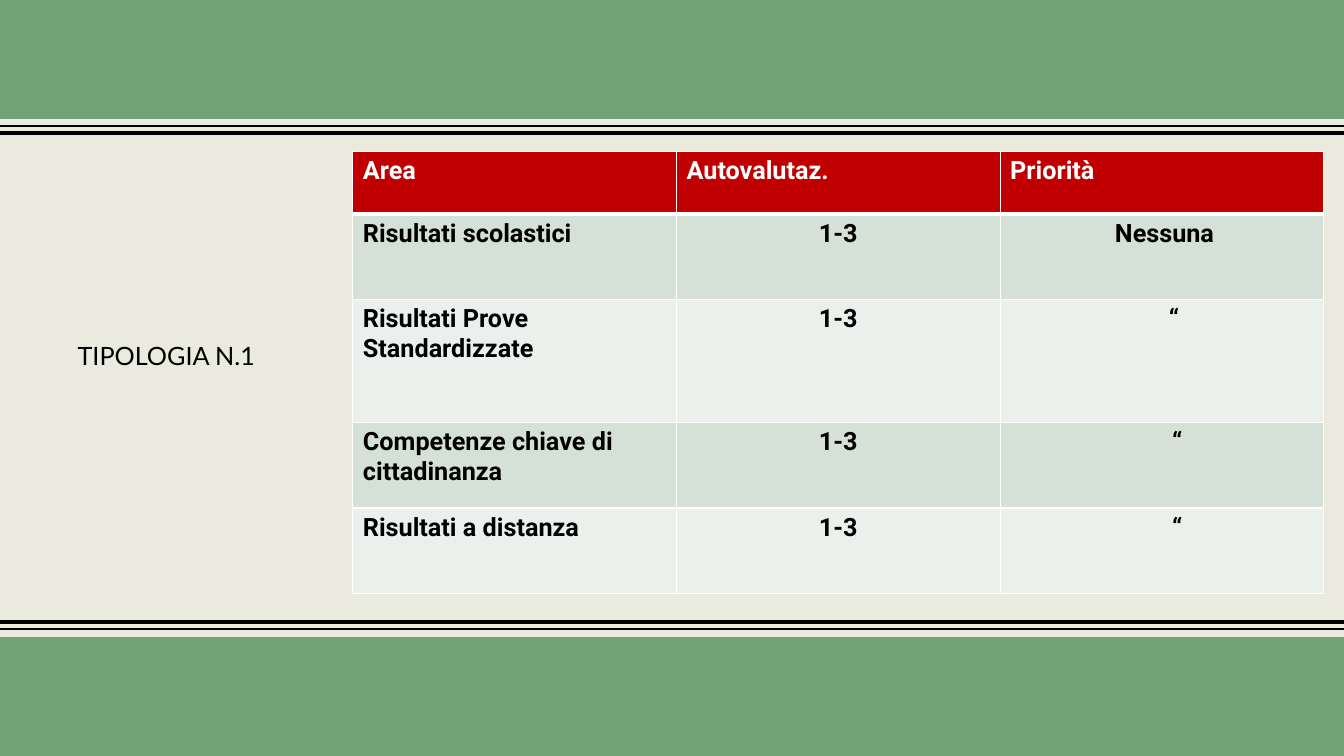
from lxml import etree
from pptx import Presentation
from pptx.dml.color import RGBColor
from pptx.enum.shapes import MSO_CONNECTOR, MSO_SHAPE
from pptx.enum.text import MSO_ANCHOR, PP_ALIGN
from pptx.oxml import parse_xml
from pptx.oxml.ns import nsdecls, qn
from pptx.util import Inches, Pt

STRAIGHT = MSO_CONNECTOR.STRAIGHT
RECTANGLE = MSO_SHAPE.RECTANGLE
LEFT, CENTER = PP_ALIGN.LEFT, PP_ALIGN.CENTER
BOTTOM = MSO_ANCHOR.BOTTOM
WIDTH, HEIGHT = 13.33, 7.5
BAND_HEIGHT = 1.18


def color(value):
    return RGBColor.from_string(value)


def write(para, text, font, ink, bold, align):
    para.alignment = align
    span = para.add_run()
    span.text = text
    span.font.name = font
    span.font.size = Pt(18)
    span.font.bold = bold
    span.font.color.rgb = color(ink)


deck = Presentation()
deck.slide_width, deck.slide_height = Inches(WIDTH), Inches(HEIGHT)
page = deck.slides.add_slide(deck.slide_layouts[5])
page.background.fill.solid()
page.background.fill.fore_color.rgb = color("EAEBDE")

# Green bands at the top and bottom
for top in (0, HEIGHT - BAND_HEIGHT):
    band = page.shapes.add_shape(
        RECTANGLE, 0, Inches(top), Inches(WIDTH), Inches(BAND_HEIGHT))
    band.shadow.inherit = False
    band.fill.solid()
    band.fill.fore_color.rgb = color("72A376")
    band.line.fill.background()

# Double rules beside the bands
for y, weight in ((1.25, 1), (1.32, 3), (6.17, 3), (6.24, 1)):
    rule = page.shapes.add_connector(
        STRAIGHT, 0, Inches(y), Inches(WIDTH), Inches(y))
    rule.line.color.rgb = color("000000")
    rule.line.width = Pt(weight)
    etree.SubElement(rule._element.spPr, qn("a:effectLst"))

# Title
title = page.shapes.title
title.left, title.top = Inches(0.67), Inches(2.69)
title.width, title.height = Inches(2.85), Inches(1.04)
title.text_frame.word_wrap = True
title.text_frame.vertical_anchor = BOTTOM
write(title.text_frame.paragraphs[0], "TIPOLOGIA N.1", "Lato", "000000",
      False, LEFT)

# Table: cell texts, row height, left margin of the last column
rows = [
    (("Area", "Autovalutaz.", "Priorità"), 0.62, 0.1),
    (("Risultati scolastici", "1-3", "Nessuna"), 0.85, 0.15),
    (("Risultati Prove Standardizzate", "1-3", "“"), 1.22, 0.34),
    (("Competenze chiave di cittadinanza", "1-3", "“"), 0.85, 0.4),
    (("Risultati a distanza", "1-3", "“"), 0.85, 0.4),
]
table = page.shapes.add_table(
    len(rows), 3, Inches(3.5), Inches(1.5), Inches(9.63), Inches(4.4)).table
for column in table.columns:
    column.width = Inches(3.21)

for r, (texts, height, last_margin) in enumerate(rows):
    table.rows[r].height = Inches(height)
    header = r == 0
    fill = "C00000" if header else ("EBF0EC", "D5E0D6")[r % 2]
    for c, text in enumerate(texts):
        cell = table.cell(r, c)
        cell.fill.solid()
        cell.fill.fore_color.rgb = color(fill)
        if c == 2:
            cell.margin_left = Inches(last_margin)
        write(cell.text_frame.paragraphs[0], text, "Roboto",
              "FFFFFF" if header else "000000", True,
              LEFT if header or c == 0 else CENTER)
        # White cell borders, thicker between header and body
        weights = {"lnL": 1, "lnR": 1, "lnT": 3 if r == 1 else 1,
                   "lnB": 3 if header else 1}
        for place, (side, weight) in enumerate(weights.items()):
            border = parse_xml(
                f'<a:{side} {nsdecls("a")} w="{Pt(weight)}"><a:solidFill>'
                f'<a:srgbClr val="FFFFFF"/></a:solidFill></a:{side}>')
            cell._tc.get_or_add_tcPr().insert(place, border)

deck.save("out.pptx")
